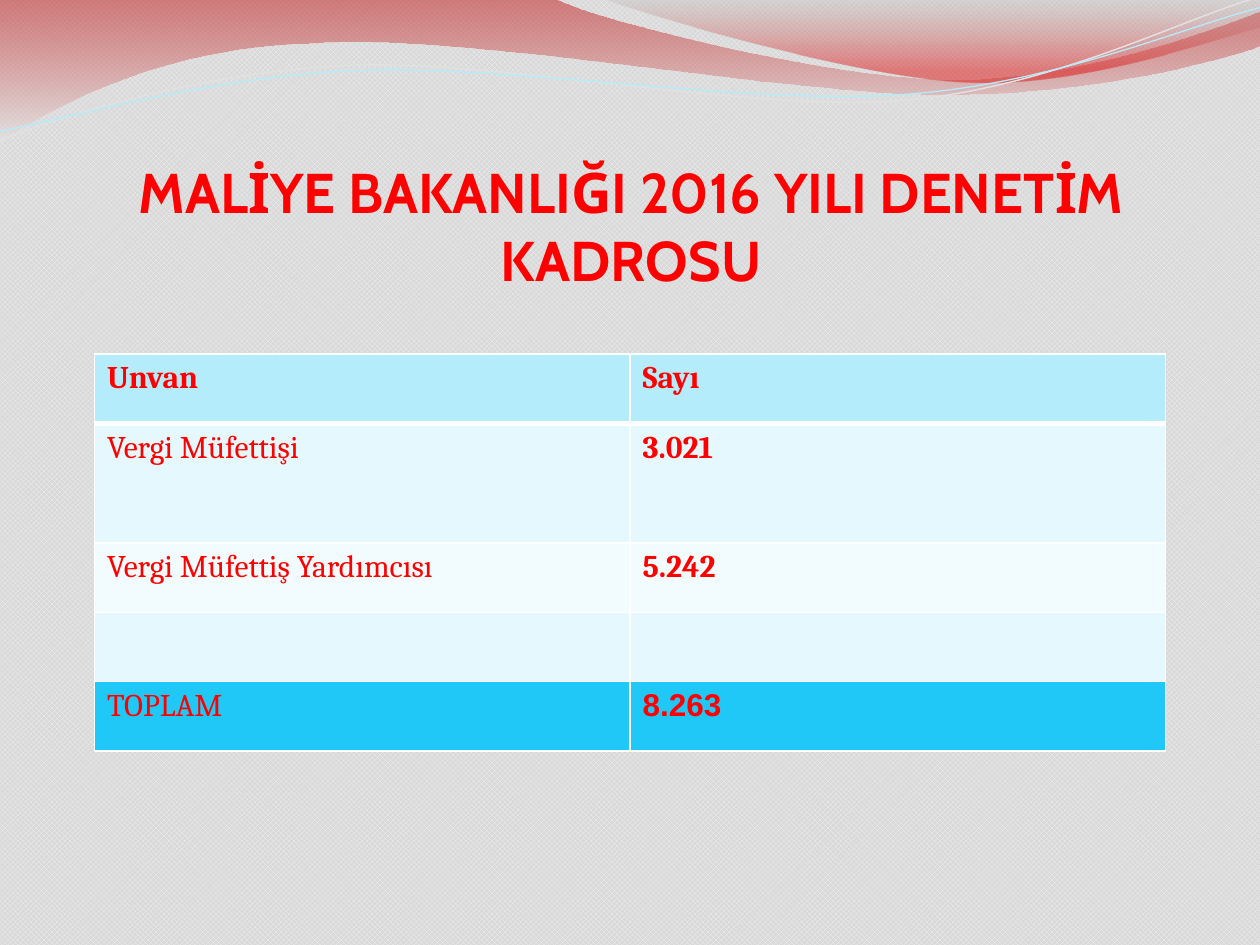
from dataclasses import dataclass
from typing import Any

from pptx import Presentation
from pptx.dml.color import RGBColor as Rgb
from pptx.enum.dml import MSO_PATTERN as Pattern
from pptx.enum.text import MSO_ANCHOR as Anchor, PP_ALIGN as Align
from pptx.oxml import parse_xml
from pptx.oxml.ns import nsdecls, qn
from pptx.oxml.xmlchemy import OxmlElement
from pptx.util import Inches, Pt

COLORS = {
    "pattern_front": "F2F2F2", "pattern_back": "D9D9D9",
    "wave_red": "BD0000", "wave_pale": "E7E7E7",
    "crest_gray": "BDBDBD", "crest_red": "E10000",
    "gray_line": "E1E1E1", "blue_line": "B4ECFC",
    "text": "FF0000", "border": "FFFFFF", "header": "B4ECFC",
    "band": "E5F8FE", "light_band": "F2FBFE", "total": "20C8F7",
}

WAVE = [
    (0, 0), (4.4, -0.01), (4.76, 0.17, 6.64, 0.63, 7.58, 0.63),
    (8.53, 0.63, 9.58, 0.26, 10, 0.09), (10.01, 0.36),
    (9.83, 0.44, 8.7, 0.76, 7.46, 0.75), (6.22, 0.75, 3.82, 0.28, 2.57, 0.34),
    (1.29, 0.36, 0.46, 0.83, -0.01, 1.13), (0, 0),
]
CREST = [
    (4.79, -0.01), (5.09, 0.11, 6.82, 0.62, 7.69, 0.65),
    (8.56, 0.69, 9.61, 0.32, 10, 0.21), (10, 0), (4.79, -0.01),
]
GRAY_CURVE = [
    (0, 1.11), (0.48, 0.93, 1.58, 0.57, 2.77, 0.52),
    (3.95, 0.47, 5.93, 0.89, 7.13, 0.8), (8.33, 0.71, 9.38, 0.15, 9.98, -0.02),
]
BLUE_CURVE = [
    (0, 1.04), (0.47, 0.96, 1.64, 0.61, 2.83, 0.56),
    (4.03, 0.51, 5.97, 0.84, 7.17, 0.75), (8.36, 0.67, 9.41, 0.21, 10, 0.06),
]
ROWS = [
    ("Unvan", "Sayı", "header", 0.55),
    ("Vergi Müfettişi", "3.021", "band", 0.95),
    ("Vergi Müfettiş Yardımcısı", "5.242", "light_band", 0.55),
    ("", "", "band", 0.55),
    ("TOPLAM", "8.263", "total", 0.55),
]


def color(name):
    return Rgb.from_string(COLORS[name])


@dataclass
class SlideBuilder:
    slide: Any
    title_font: str = "Cabin"
    body_font: str = "Cambria"
    total_font: str = "Arial"

    def background(self):
        fill = self.slide.background.fill
        fill.patterned()
        fill.pattern = Pattern.TRELLIS
        fill.fore_color.rgb = color("pattern_front")
        fill.back_color.rgb = color("pattern_back")

    def outline(self, segments, close):
        points = [
            (Inches(segment[index]), Inches(segment[index + 1]))
            for segment in segments for index in range(0, len(segment), 2)
        ]
        builder = self.slide.shapes.build_freeform(*points[0], scale=1.0)
        builder.add_line_segments(points[1:], close=close)
        shape = builder.convert_to_shape()
        shape.shadow.inherit = False
        lines = iter(list(shape._element.iter(qn("a:lnTo"))))
        for segment in segments[1:]:
            first = next(lines)
            if len(segment) == 6:
                bezier = OxmlElement("a:cubicBezTo")
                first.addprevious(bezier)
                for line in (first, next(lines), next(lines)):
                    bezier.append(line[0])
                    line.getparent().remove(line)
        return shape

    def wave(self, segments, stops):
        shape = self.outline(segments, True)
        shape.line.fill.background()
        shape.fill.gradient()
        shape.fill.gradient_angle = 270
        for stop, (position, name, _) in zip(shape.fill.gradient_stops, stops):
            stop.position = position
            stop.color.rgb = color(name)
        elements = shape._element.spPr.iter(qn("a:srgbClr"))
        for element, (_, _, opacity) in zip(elements, stops):
            alpha = OxmlElement("a:alpha")
            alpha.set("val", str(opacity * 1000))
            element.append(alpha)

    def curve(self, segments, name, width):
        shape = self.outline(segments, False)
        shape.fill.background()
        shape.line.color.rgb = color(name)
        shape.line.width = Pt(width)

    def run(self, paragraph, text, size, font, bold):
        run = paragraph.add_run()
        run.text = text
        run.font.size = Pt(size)
        run.font.name = font
        run.font.bold = bold
        run.font.color.rgb = color("text")

    def title(self, text, left, top, width, height):
        box = self.slide.shapes.add_textbox(
            Inches(left), Inches(top), Inches(width), Inches(height))
        frame = box.text_frame
        frame.word_wrap = True
        frame.vertical_anchor = Anchor.BOTTOM
        frame.margin_left = frame.margin_right = frame.margin_bottom = 0
        frame.margin_top = Inches(0.05)
        paragraph = frame.paragraphs[0]
        paragraph.alignment = Align.CENTER
        self.run(paragraph, text, 32, self.title_font, True)

    def borders(self, cell, top, bottom):
        properties = cell._tc.get_or_add_tcPr()
        for side, width in (("L", 1), ("R", 1), ("T", top), ("B", bottom)):
            properties.append(parse_xml(
                f'<a:ln{side} {nsdecls("a")} w="{Pt(width)}"><a:solidFill>'
                f'<a:srgbClr val="{COLORS["border"]}"/></a:solidFill></a:ln{side}>'))

    def table(self, rows, left, top, width):
        height = sum(row[-1] for row in rows)
        table = self.slide.shapes.add_table(
            len(rows), 2, Inches(left), Inches(top), Inches(width), Inches(height)).table
        for column in table.columns:
            column.width = Inches(width / 2)
        for index, (*texts, fill, row_height) in enumerate(rows):
            table.rows[index].height = Inches(row_height)
            for position, text in enumerate(texts):
                cell = table.cell(index, position)
                self.borders(cell, 3 if index == 1 else 1, 3 if index == 0 else 1)
                cell.fill.solid()
                cell.fill.fore_color.rgb = color(fill)
                if text:
                    is_sum = fill == "total" and position == 1
                    font = self.total_font if is_sum else self.body_font
                    bold = index == 0 or position == 1
                    self.run(cell.text_frame.paragraphs[0], text, 18, font, bold)


def main():
    presentation = Presentation()
    presentation.slide_width = Inches(10)
    presentation.slide_height = Inches(7.5)
    builder = SlideBuilder(presentation.slides.add_slide(presentation.slide_layouts[6]))
    builder.background()
    builder.wave(WAVE, [(0, "wave_red", 45), (1, "wave_pale", 55)])
    builder.wave(CREST, [(0, "crest_gray", 30), (0.8, "crest_red", 45)])
    builder.curve(GRAY_CURVE, "gray_line", 0.85)
    builder.curve(BLUE_CURVE, "blue_line", 0.75)
    builder.title("MALİYE BAKANLIĞI 2016 YILI DENETİM KADROSU", 0.51, 1.07, 9, 1.25)
    builder.table(ROWS, 0.75, 2.81, 8.5)
    presentation.save("out.pptx")


if __name__ == "__main__":
    main()
